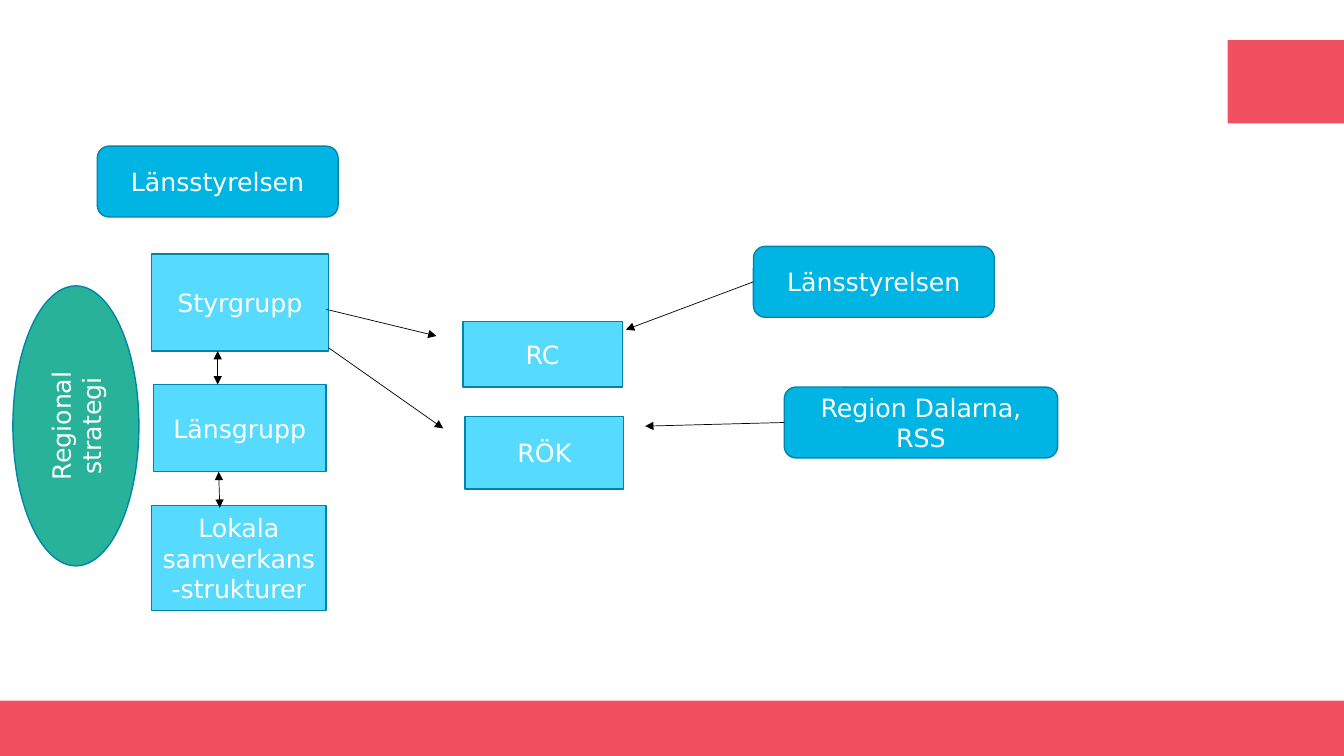
"""Build the slide on how the county groups steer RC and RÖK."""
from lxml import etree
from pptx import Presentation
from pptx import util as u
from pptx.dml.color import RGBColor
from pptx.enum import shapes, text
from pptx.oxml.ns import qn

COLORS = {"band": "F15060", "agency": "00B4E4", "group": "56DBFF", "strategy": "28B29A",
          "outline": "0085A9", "text": "FFFFFF", "arrow": "000000"}
RECT = shapes.MSO_SHAPE.RECTANGLE
ROUND = shapes.MSO_SHAPE.ROUNDED_RECTANGLE
OVAL = shapes.MSO_SHAPE.OVAL


def rgb(name):
    return RGBColor.from_string(COLORS[name])


def add_box(label, *, at, fill, kind=RECT, outline="outline", rotation=0, size=18):
    sp = s.shapes.add_shape(kind, *map(u.Pt, at))
    sp.shadow.inherit = False
    sp.rotation = rotation
    sp.fill.solid()
    sp.fill.fore_color.rgb = rgb(fill)
    if outline:
        sp.line.color.rgb = rgb(outline)
        sp.line.width = u.Pt(1)
    else:
        sp.line.fill.background()
    if label:
        tf = sp.text_frame
        tf.word_wrap = True
        tf.vertical_anchor = text.MSO_ANCHOR.MIDDLE
        p = tf.paragraphs[0]
        p.alignment = text.PP_ALIGN.CENTER
        r = p.add_run()
        r.text = label
        r.font.name = "DejaVu Sans"
        r.font.size = u.Pt(size)
        r.font.color.rgb = rgb("text")
    return sp


prs = Presentation()
prs.slide_width, prs.slide_height = u.Pt(960), u.Pt(540)
s = prs.slides.add_slide(prs.slide_layouts[6])

for band in [(0, 500.4, 960, 39.6), (876.8, 28.6, 83.2, 59.6)]:
    add_box("", at=band, fill="band", outline=None)

add_box("Länsstyrelsen", at=(69.5, 104.4, 172, 50.6), fill="agency", kind=ROUND)
region = add_box("Region Dalarna, RSS", at=(560.2, 276.5, 195.3, 50.6), fill="agency", kind=ROUND)
add_box("Regional strategi", at=(-45.8, 259.2, 200, 90), fill="strategy", kind=OVAL, rotation=270)

groups = [
    ("Styrgrupp", (108.2, 181.4, 126.4, 69.3)),
    ("Länsgrupp", (109.6, 274.7, 123.4, 62.3)),
    ("Lokala samverkans-strukturer", (108.2, 361.2, 124.8, 74.7)),
    ("RC", (330.7, 229.5, 113.8, 47)),
    ("RÖK", (332.1, 297.4, 113.5, 51.9)),
]
for label, at in groups:
    add_box(label, at=at, fill="group")

county = add_box("Länsstyrelsen", at=(538.2, 176, 172, 50.6), fill="agency", kind=ROUND)

arrows = [
    ((233.2, 221), (311.8, 240), None, False),
    ((234.7, 248.4), (316.6, 306), None, False),
    ((538.2, 201.3), (447.1, 235.5), county, False),
    ((560.2, 301.8), (460.8, 304.4), region, False),
    ((156.2, 337), (157, 362.7), None, True),
    ((155.5, 250.7), (155.5, 274.7), None, True),
]
for start, end, source, two_way in arrows:
    c = s.shapes.add_connector(shapes.MSO_CONNECTOR.STRAIGHT, *map(u.Pt, start + end))
    if source:
        c.begin_connect(source, 1)
    c.line.color.rgb = rgb("arrow")
    c.line.width = u.Pt(0.5)
    ln = c.line._get_or_add_ln()
    for tag in ["a:headEnd", "a:tailEnd"] if two_way else ["a:tailEnd"]:
        etree.SubElement(ln, qn(tag), type="triangle")
    etree.SubElement(c._element.spPr, qn("a:effectLst"))

prs.save("out.pptx")
